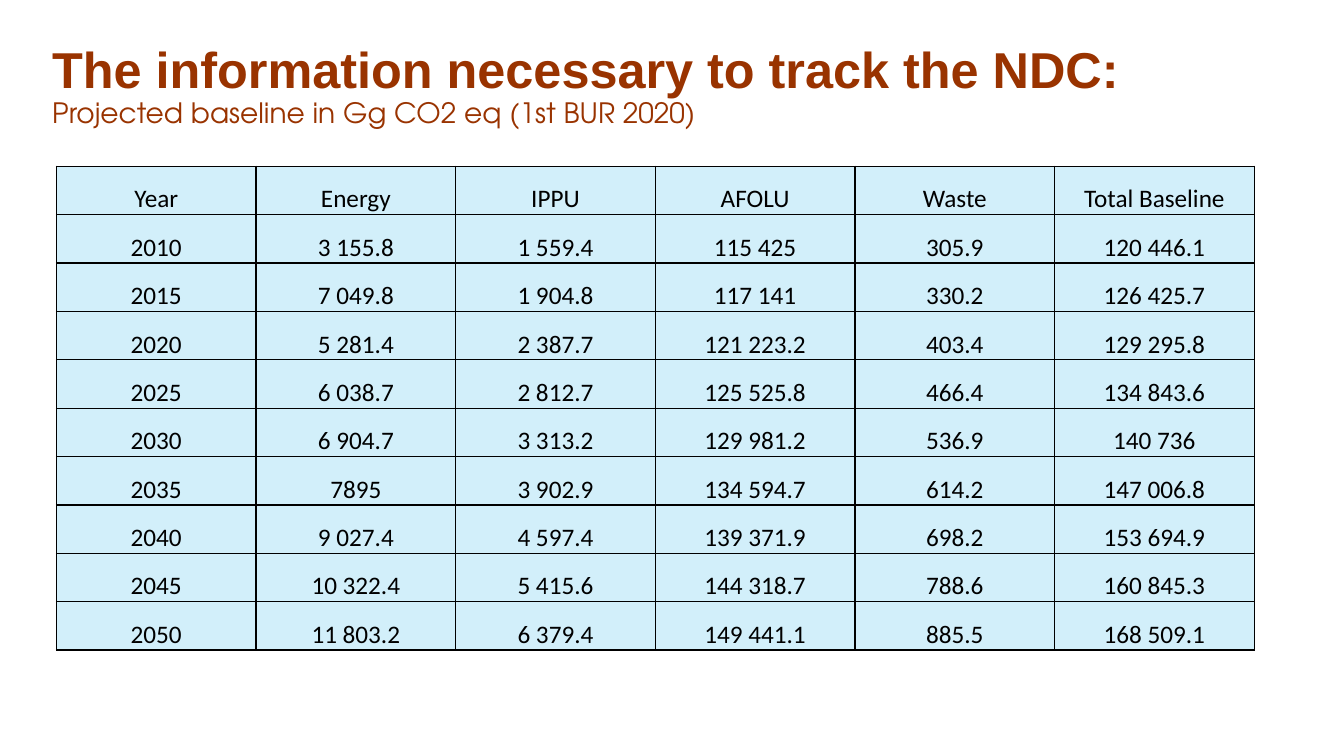
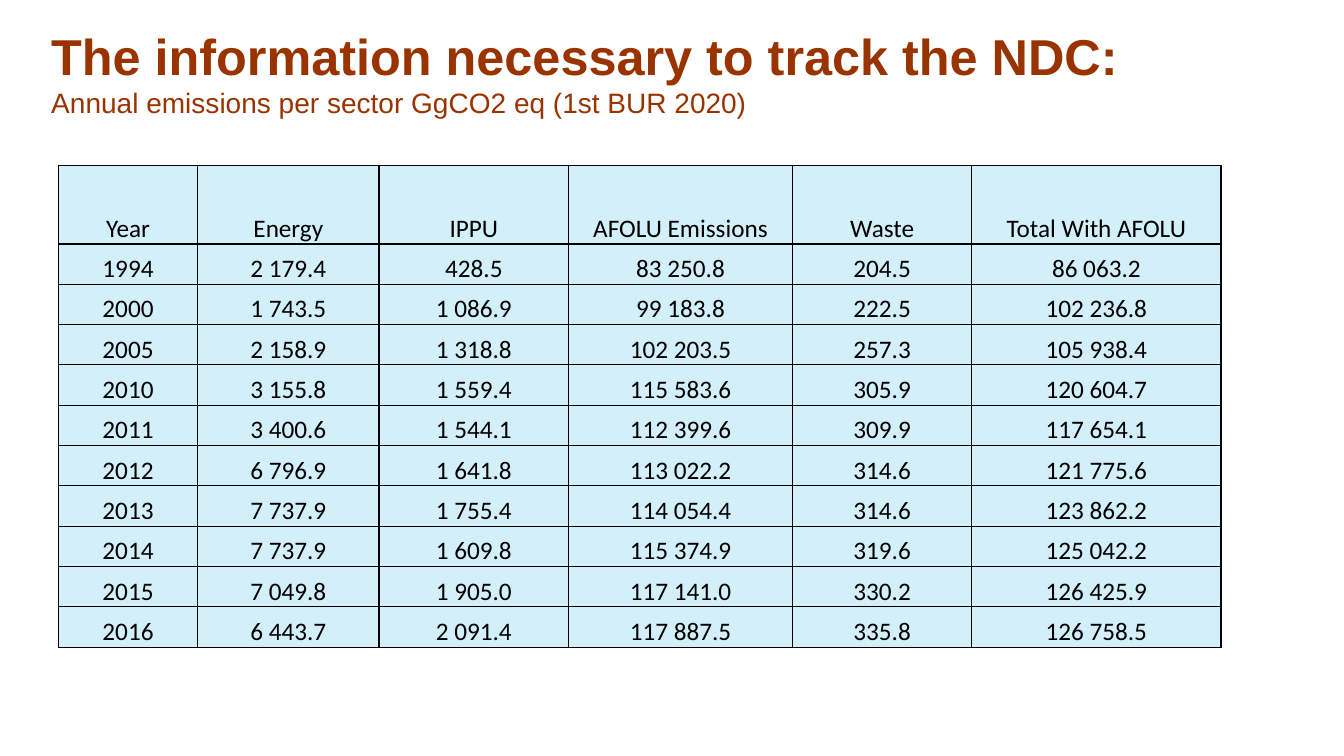
from lxml.etree import SubElement
from pptx import Presentation
from pptx.dml.color import RGBColor
from pptx.enum.text import MSO_ANCHOR, PP_ALIGN
from pptx.oxml.ns import qn
from pptx.util import Inches, Pt

TITLE = "The information necessary to track the NDC:"
TITLE_COLOUR = "993300"
CELL_COLOUR = "D2EFFA"
INK = "000000"

BASELINE = [
    ("Year", "Energy", "IPPU", "AFOLU", "Waste", "Total Baseline"),
    ("2010", "3 155.8", "1 559.4", "115 425", "305.9", "120 446.1"),
    ("2015", "7 049.8", "1 904.8", "117 141", "330.2", "126 425.7"),
    ("2020", "5 281.4", "2 387.7", "121 223.2", "403.4", "129 295.8"),
    ("2025", "6 038.7", "2 812.7", "125 525.8", "466.4", "134 843.6"),
    ("2030", "6 904.7", "3 313.2", "129 981.2", "536.9", "140 736"),
    ("2035", "7895", "3 902.9", "134 594.7", "614.2", "147 006.8"),
    ("2040", "9 027.4", "4 597.4", "139 371.9", "698.2", "153 694.9"),
    ("2045", "10 322.4", "5 415.6", "144 318.7", "788.6", "160 845.3"),
    ("2050", "11 803.2", "6 379.4", "149 441.1", "885.5", "168 509.1"),
]

EMISSIONS = [
    ("Year", "Energy", "IPPU", "AFOLU Emissions", "Waste", "Total With AFOLU"),
    ("1994", "2 179.4", "428.5", "83 250.8", "204.5", "86 063.2"),
    ("2000", "1 743.5", "1 086.9", "99 183.8", "222.5", "102 236.8"),
    ("2005", "2 158.9", "1 318.8", "102 203.5", "257.3", "105 938.4"),
    ("2010", "3 155.8", "1 559.4", "115 583.6", "305.9", "120 604.7"),
    ("2011", "3 400.6", "1 544.1", "112 399.6", "309.9", "117 654.1"),
    ("2012", "6 796.9", "1 641.8", "113 022.2", "314.6", "121 775.6"),
    ("2013", "7 737.9", "1 755.4", "114 054.4", "314.6", "123 862.2"),
    ("2014", "7 737.9", "1 609.8", "115 374.9", "319.6", "125 042.2"),
    ("2015", "7 049.8", "1 905.0", "117 141.0", "330.2", "126 425.9"),
    ("2016", "6 443.7", "2 091.4", "117 887.5", "335.8", "126 758.5"),
]


def colour(value):
    return RGBColor.from_string(value)


def add_span(para, text, size, font, ink, bold=False):
    span = para.add_run()
    span.text = text
    span.font.size = Pt(size)
    span.font.name = font
    span.font.bold = bold
    span.font.color.rgb = colour(ink)


def add_heading(page, subtitle, left, top, width, font="Arial", spacing=1.0):
    box = page.shapes.add_textbox(Inches(left), Inches(top), Inches(width), Inches(1.04))
    frame = box.text_frame
    frame.word_wrap = True
    title_para = frame.paragraphs[0]
    subtitle_para = frame.add_paragraph()
    add_span(title_para, TITLE, 36, "Arial", TITLE_COLOUR, bold=True)
    add_span(subtitle_para, subtitle, 20, font, TITLE_COLOUR)
    for para in frame.paragraphs:
        para.line_spacing = spacing


def add_borders(cell):
    properties = cell._tc.get_or_add_tcPr()
    for side in ("lnL", "lnR", "lnT", "lnB"):
        line = SubElement(properties, qn(f"a:{side}"), w=str(Pt(1)))
        fill = SubElement(line, qn("a:solidFill"))
        SubElement(fill, qn("a:srgbClr"), val=INK)


def fill_cell(cell, text):
    add_borders(cell)
    cell.fill.solid()
    cell.fill.fore_color.rgb = colour(CELL_COLOUR)
    cell.vertical_anchor = MSO_ANCHOR.BOTTOM
    cell.margin_left = cell.margin_right = cell.margin_top = Inches(0.01)
    cell.margin_bottom = 0
    para = cell.text_frame.paragraphs[0]
    para.alignment = PP_ALIGN.CENTER
    add_span(para, text, 18, "Calibri", INK)


def add_data_table(page, records, left, top, widths, heights):
    frame = page.shapes.add_table(
        len(records), len(widths), Inches(left), Inches(top),
        Inches(sum(widths)), Inches(sum(heights)),
    )
    table = frame.table
    table.first_row = table.horz_banding = False
    for column, width in zip(table.columns, widths):
        column.width = Inches(width)
    for row, height, record in zip(table.rows, heights, records):
        row.height = Inches(height)
        for cell, text in zip(row.cells, record):
            fill_cell(cell, text)


def main():
    deck = Presentation()
    deck.slide_width = Inches(13.33)
    deck.slide_height = Inches(7.5)
    blank = deck.slide_layouts[6]

    page = deck.slides.add_slide(blank)
    add_heading(page, "Projected baseline in Gg CO2 eq (1st BUR 2020)",
                0.42, 0.4, 10.8, "TeX Gyre Adventor", 0.9)
    add_data_table(page, BASELINE, 0.56, 1.65, [1.98] * 6, [0.48] * 10)

    page = deck.slides.add_slide(blank)
    add_heading(page, "Annual emissions per sector GgCO2 eq (1st BUR 2020)",
                0.41, 0.2, 12.52)
    add_data_table(page, EMISSIONS, 0.58, 1.64,
                   [1.38, 1.8, 1.88, 2.22, 1.78, 2.47], [0.78] + [0.4] * 10)

    deck.save("out.pptx")


if __name__ == "__main__":
    main()
